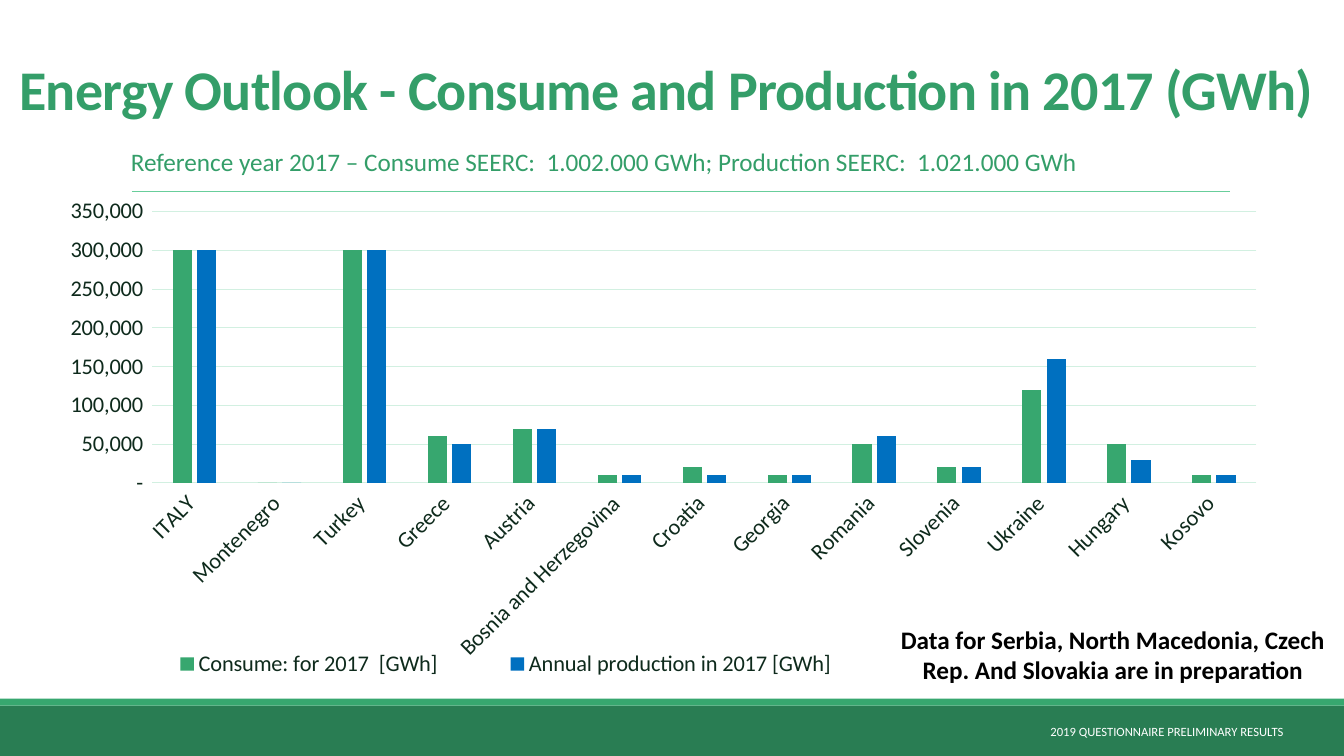
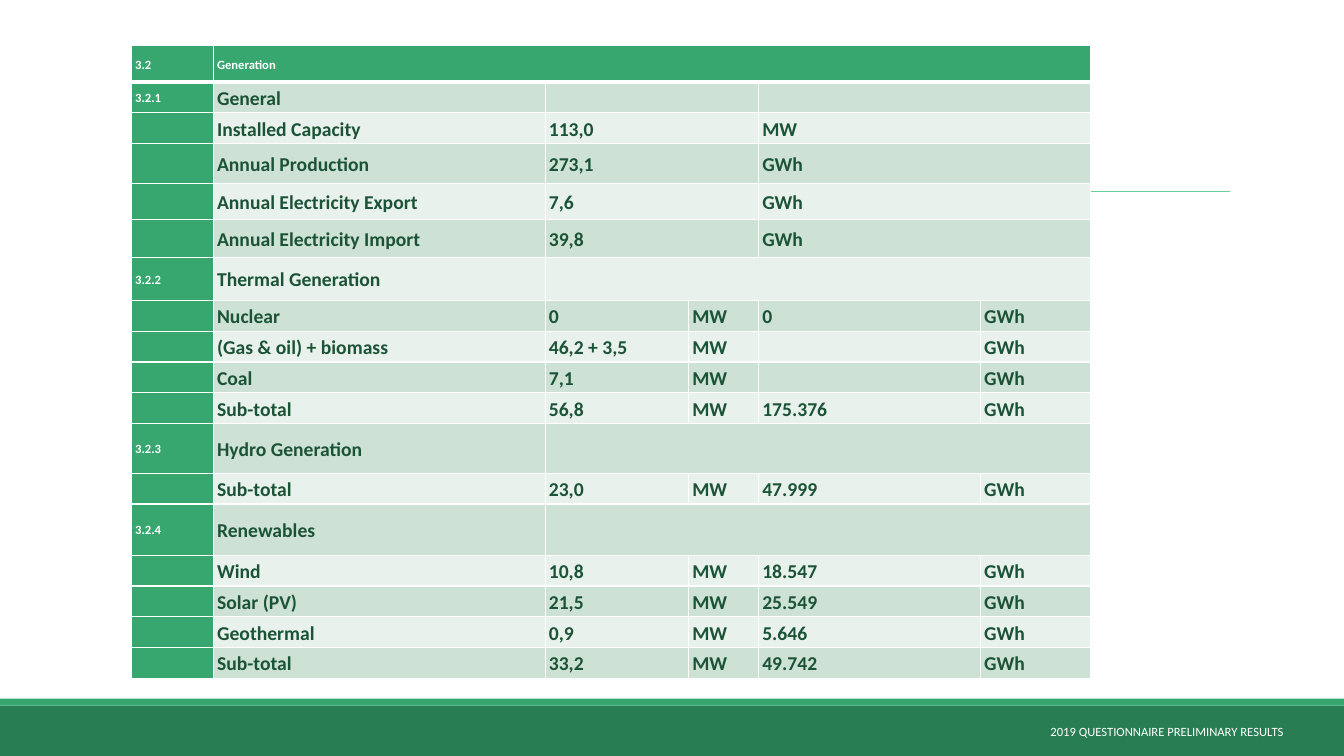
from dataclasses import dataclass
from typing import NamedTuple

from lxml import etree
from pptx import Presentation
from pptx.chart.data import CategoryChartData
from pptx.dml.color import RGBColor
from pptx.enum.chart import XL_CHART_TYPE, XL_LEGEND_POSITION, XL_TICK_MARK
from pptx.enum.shapes import MSO_CONNECTOR, MSO_SHAPE
from pptx.enum.text import MSO_ANCHOR, PP_ALIGN
from pptx.oxml import parse_xml
from pptx.oxml.ns import nsdecls, qn
from pptx.util import Pt

CLUSTERED = XL_CHART_TYPE.COLUMN_CLUSTERED
LEGEND_RIGHT = XL_LEGEND_POSITION.RIGHT
NO_TICK = XL_TICK_MARK.NONE
STRAIGHT = MSO_CONNECTOR.STRAIGHT
RECTANGLE = MSO_SHAPE.RECTANGLE
TOP, MIDDLE = MSO_ANCHOR.TOP, MSO_ANCHOR.MIDDLE
LEFT, CENTER = PP_ALIGN.LEFT, PP_ALIGN.CENTER


@dataclass(frozen=True)
class Theme:
    font: str = "Calibri"
    band: str = "297D53"
    accent: str = "37A76F"
    heading: str = "349E69"
    rule: str = "68CE9B"
    grid: str = "D2F0E1"
    chart_text: str = "0E2A1C"
    production: str = "0070C0"
    table_text: str = "1B5337"
    row_dark: str = "CEE1D5"
    row_light: str = "E8F1EB"
    white: str = "FFFFFF"
    black: str = "000000"
    title_size: float = 40
    body_size: float = 18
    chart_size: float = 16
    cell_size: float = 14
    small_size: float = 9


THEME = Theme()


class Box(NamedTuple):
    left: float
    top: float
    width: float
    height: float

    def lengths(self) -> list:
        return [Pt(value) for value in self]


class TextStyle(NamedTuple):
    size: float
    color: str
    bold: bool = False
    align: PP_ALIGN = LEFT
    anchor: MSO_ANCHOR = TOP
    line_spacing: float = 1.0
    tracking: float = 0


class Row(NamedTuple):
    height: float
    spans: tuple
    texts: tuple


class Series(NamedTuple):
    name: str
    color: str
    values: tuple


PAGE = Box(0, 0, 960, 540)
BANDS = ((Box(0, 504, 960, 36), THEME.band), (Box(0, 499, 960, 5), THEME.accent))
RULE = Box(94.3, 136.8, 784.2, 0)

TITLE = TextStyle(THEME.title_size, THEME.heading, True, anchor=MIDDLE,
                  line_spacing=0.85, tracking=-0.5)
SUBTITLE = TextStyle(THEME.body_size, THEME.heading, line_spacing=0.9)
NOTE = TextStyle(THEME.body_size, THEME.black, True, CENTER)
FOOTER = TextStyle(THEME.small_size, THEME.white, align=CENTER, anchor=MIDDLE)

COUNTRIES = ("ITALY", "Montenegro", "Turkey", "Greece", "Austria",
             "Bosnia and Herzegovina", "Croatia", "Georgia", "Romania",
             "Slovenia", "Ukraine", "Hungary", "Kosovo")
ENERGY = (
    Series("Consume: for 2017  [GWh]", THEME.accent,
           (300000, 0, 300000, 60000, 70000, 10000, 20000, 10000, 50000,
            20000, 120000, 50000, 10000)),
    Series("Annual production in 2017 [GWh]", THEME.production,
           (300000, 0, 300000, 50000, 70000, 10000, 10000, 10000, 60000,
            20000, 160000, 30000, 10000)),
)
NUMBER_FORMAT = '_(* #,##0_);_(* \\(#,##0\\);_(* "-"_);_(@_)'

HEADER = (1, 5)
GENERAL = (1, 1, 2, 2)
SECTION = (1, 1, 4)
DETAIL = (1,) * 6
COLUMNS = (58.5, 237, 102.5, 50, 158.5, 78.5)
GENERATION = (
    Row(26, HEADER, ("3.2", "Generation")),
    Row(22, GENERAL, ("3.2.1", "General", "", "")),
    Row(22, GENERAL, ("", "Installed Capacity", "113,0", "MW")),
    Row(28.5, GENERAL, ("", "Annual Production", "273,1", "GWh")),
    Row(25.8, GENERAL, ("", "Annual Electricity Export", "7,6", "GWh")),
    Row(27, GENERAL, ("", "Annual Electricity Import", "39,8", "GWh")),
    Row(30.8, SECTION, ("3.2.2", "Thermal Generation", "")),
    Row(22, DETAIL, ("", "Nuclear", "0", "MW", "0", "GWh")),
    Row(22, DETAIL, ("", "(Gas & oil) + biomass", "46,2 + 3,5", "MW", "", "GWh")),
    Row(22, DETAIL, ("", "Coal", "7,1", "MW", "", "GWh")),
    Row(22, DETAIL, ("", "Sub-total", "56,8", "MW", "175.376", "GWh")),
    Row(35.5, SECTION, ("3.2.3", "Hydro Generation", "")),
    Row(22, DETAIL, ("", "Sub-total", "23,0", "MW", "47.999", "GWh")),
    Row(36.5, SECTION, ("3.2.4", "Renewables", "")),
    Row(22, DETAIL, ("", "Wind", "10,8", "MW", "18.547", "GWh")),
    Row(22, DETAIL, ("", "Solar (PV)", "21,5", "MW", "25.549", "GWh")),
    Row(22, DETAIL, ("", "Geothermal", "0,9", "MW", "5.646", "GWh")),
    Row(22, DETAIL, ("", "Sub-total", "33,2", "MW", "49.742", "GWh")),
)


def rgb(color: str) -> RGBColor:
    return RGBColor.from_string(color)


def style_font(font, size: float, color: str, bold: bool = False) -> None:
    font.name = THEME.font
    font.size = Pt(size)
    font.bold = bold
    font.color.rgb = rgb(color)


def add_text(page, box: Box, text: str, style: TextStyle) -> None:
    frame = page.shapes.add_textbox(*box.lengths()).text_frame
    frame.word_wrap = True
    frame.vertical_anchor = style.anchor
    frame.text = text
    para = frame.paragraphs[0]
    para.alignment = style.align
    para.line_spacing = style.line_spacing
    for span in para.runs:
        style_font(span.font, style.size, style.color, style.bold)
        if style.tracking:
            span.font._element.set("spc", str(int(style.tracking * 100)))


def add_page(deck):
    page = deck.slides.add_slide(deck.slide_layouts[6])
    for box, color in BANDS:
        band = page.shapes.add_shape(RECTANGLE, *box.lengths())
        band.shadow.inherit = False
        band.fill.solid()
        band.fill.fore_color.rgb = rgb(color)
        band.line.fill.background()
    left, top, width, height = RULE
    rule = page.shapes.add_connector(
        STRAIGHT, Pt(left), Pt(top), Pt(left + width), Pt(top + height))
    rule.line.color.rgb = rgb(THEME.rule)
    rule.line.width = Pt(0.5)
    etree.SubElement(rule._element.spPr, qn("a:effectLst"))
    return page


def add_footer(page) -> None:
    add_text(page, Box(706.8, 508.3, 253.4, 28.8),
             "2019 QUESTIONNAIRE PRELIMINARY RESULTS", FOOTER)


def manual_layout(box: Box, inner: bool = False):
    target = '<c:layoutTarget val="inner"/>' if inner else ""
    modes = "".join(f'<c:{axis}Mode val="edge"/>' for axis in "xy")
    sizes = "".join(f'<c:{key} val="{value}"/>' for key, value in zip("xywh", box))
    return parse_xml(f'<c:layout {nsdecls("c")}><c:manualLayout>{target}{modes}{sizes}'
                     "</c:manualLayout></c:layout>")


def add_energy_chart(page, box: Box) -> None:
    data = CategoryChartData(number_format=NUMBER_FORMAT)
    data.categories = [f" {country} " for country in COUNTRIES]
    for series in ENERGY:
        data.add_series(series.name, series.values)
    chart = page.shapes.add_chart(CLUSTERED, *box.lengths(), data).chart
    style_font(chart.font, THEME.chart_size, THEME.chart_text)
    chart.has_title = False

    plot = chart.plots[0]
    plot.gap_width = 219
    plot.overlap = -27
    plot.vary_by_categories = False
    for bars, series in zip(plot.series, ENERGY):
        bars.format.fill.solid()
        bars.format.fill.fore_color.rgb = rgb(series.color)

    countries, amounts = chart.category_axis, chart.value_axis
    for axis in (countries, amounts):
        axis.major_tick_mark = axis.minor_tick_mark = NO_TICK
        style_font(axis.tick_labels.font, THEME.chart_size, THEME.chart_text)
    countries._element.find(qn("c:txPr")).find(qn("a:bodyPr")).set("rot", "-2700000")
    amounts.minimum_scale, amounts.maximum_scale = 0, 350000
    amounts.major_unit = 50000
    amounts.tick_labels.number_format = NUMBER_FORMAT
    amounts.tick_labels.number_format_is_linked = False
    amounts.format.line.fill.background()
    for line in (countries.format.line, amounts.major_gridlines.format.line):
        line.color.rgb = rgb(THEME.grid)
        line.width = Pt(0.75)

    chart.has_legend = True
    legend = chart.legend
    legend.position = LEGEND_RIGHT
    legend.include_in_layout = False
    style_font(legend.font, THEME.chart_size, THEME.chart_text)
    legend_xml = legend._element
    plot_xml = chart._chartSpace.chart.plotArea
    for parent in (legend_xml, plot_xml):
        for layout in parent.findall(qn("c:layout")):
            parent.remove(layout)
    legend_xml.find(qn("c:legendPos")).addnext(
        manual_layout(Box(0.04, 0.89, 0.63, 0.08)))
    plot_xml.insert(0, manual_layout(Box(0.07, 0.03, 0.89, 0.54), inner=True))


def set_borders(cell, bottom: float) -> None:
    properties = cell._tc.get_or_add_tcPr()
    for side, width in (("L", 1), ("R", 1), ("T", 1), ("B", bottom)):
        properties.append(parse_xml(
            f'<a:ln{side} {nsdecls("a")} w="{Pt(width)}"><a:solidFill>'
            f'<a:srgbClr val="{THEME.white}"/></a:solidFill></a:ln{side}>'))


def style_cell(cell, fill: str, bottom: float) -> None:
    set_borders(cell, bottom)
    cell.fill.solid()
    cell.fill.fore_color.rgb = rgb(fill)
    cell.margin_left = cell.margin_right = Pt(2.6)
    cell.margin_top, cell.margin_bottom = Pt(0.7), 0
    cell.vertical_anchor = MIDDLE
    ending = cell.text_frame.paragraphs[0]._p.get_or_add_endParaRPr()
    ending.set("sz", str(int(THEME.small_size * 100)))


def write_cell(cell, text: str, strong: bool) -> None:
    cell.text_frame.text = text
    para = cell.text_frame.paragraphs[0]
    para.line_spacing = 1.07
    para.space_after = Pt(8)
    size = THEME.small_size if strong else THEME.cell_size
    color = THEME.white if strong else THEME.table_text
    for span in para.runs:
        style_font(span.font, size, color, True)


def add_generation_table(page, left: float, top: float) -> None:
    box = Box(left, top, sum(COLUMNS), sum(row.height for row in GENERATION))
    table = page.shapes.add_table(len(GENERATION), len(COLUMNS), *box.lengths()).table
    table.horz_banding = False
    for column, width in zip(table.columns, COLUMNS):
        column.width = Pt(width)
    for index, row in enumerate(GENERATION):
        table.rows[index].height = Pt(row.height)
        banding = THEME.row_dark if index % 2 else THEME.row_light
        for position in range(len(COLUMNS)):
            strong = index == 0 or position == 0
            style_cell(table.cell(index, position), THEME.accent if strong else banding,
                       bottom=1 if index else 3)
        start = 0
        for text, span in zip(row.texts, row.spans):
            cell = table.cell(index, start)
            if span > 1:
                cell.merge(table.cell(index, start + span - 1))
            if text:
                write_cell(cell, text, strong=index == 0 or start == 0)
            start += span


def main() -> None:
    deck = Presentation()
    deck.slide_width, deck.slide_height = Pt(PAGE.width), Pt(PAGE.height)

    outlook = add_page(deck)
    add_text(outlook, Box(6.8, 22.6, 946, 87.8),
             "Energy Outlook - Consume and Production in 2017 (GWh)", TITLE)
    add_text(outlook, Box(86.4, 103.7, 769.7, 45.4),
             "Reference year 2017 – Consume SEERC:  1.002.000 GWh; "
             "Production SEERC:  1.021.000 GWh", SUBTITLE)
    add_energy_chart(outlook, Box(46.6, 140.4, 886.3, 359.1))
    add_text(outlook, Box(621.4, 442.4, 347, 51),
             "Data for Serbia, North Macedonia, Czech Rep. "
             "And Slovakia are in preparation", NOTE)
    add_footer(outlook)

    generation = add_page(deck)
    add_footer(generation)
    add_generation_table(generation, 94, 32.5)

    deck.save("out.pptx")


if __name__ == "__main__":
    main()
